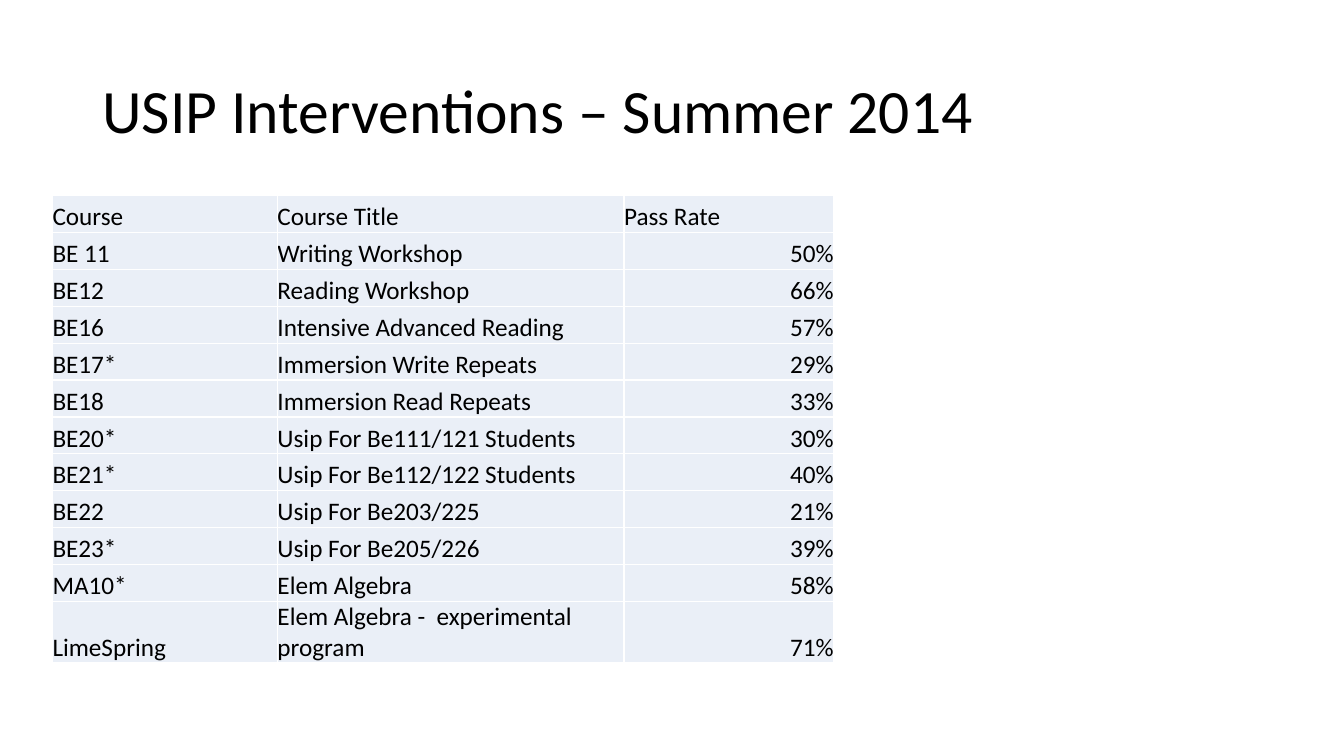
"""Build the slide with the pass rates of the summer 2014 USIP courses."""
from lxml import etree
from pptx import Presentation
from pptx import util as u
from pptx.dml.color import RGBColor
from pptx.enum import text
from pptx.oxml.ns import qn

BLACK = RGBColor(0x00, 0x00, 0x00)
WHITE = RGBColor(0xFF, 0xFF, 0xFF)
PALE_BLUE = RGBColor(0xEA, 0xEF, 0xF7)

COLUMN_WIDTHS = (160.7, 247.6, 149.8)
ROW_HEIGHT = 26.35
LAST_ROW_HEIGHT = 43.2

COURSES = [
    ("Course", "Course Title", "Pass Rate"),
    ("BE 11", "Writing Workshop", "50%"),
    ("BE12", "Reading Workshop", "66%"),
    ("BE16", "Intensive Advanced Reading", "57%"),
    ("BE17*", "Immersion Write Repeats", "29%"),
    ("BE18", "Immersion Read Repeats", "33%"),
    ("BE20*", "Usip For Be111/121 Students", "30%"),
    ("BE21*", "Usip For Be112/122 Students", "40%"),
    ("BE22", "Usip For Be203/225", "21%"),
    ("BE23*", "Usip For Be205/226", "39%"),
    ("MA10*", "Elem Algebra", "58%"),
    ("LimeSpring", "Elem Algebra -  experimental program", "71%"),
]


class SlideBuilder:
    """Hold the text style and the current slide."""

    def __init__(self, slide, font="Calibri", color=BLACK):
        """Remember the slide and its style."""
        self.slide, self.font, self.color = slide, font, color

    def add_text(self, paragraph, wording, size, align):
        """Add one styled run to a paragraph."""
        paragraph.alignment = align
        run = paragraph.add_run()
        run.text = wording
        run.font.name, run.font.size = self.font, u.Pt(size)
        run.font.color.rgb = self.color

    def title(self, wording, left, top, width, height):
        """Place and fill the title placeholder."""
        heading = self.slide.shapes.title
        heading.left, heading.top = u.Pt(left), u.Pt(top)
        heading.width, heading.height = u.Pt(width), u.Pt(height)
        frame = heading.text_frame
        frame.word_wrap = True
        frame.auto_size = text.MSO_AUTO_SIZE.NONE
        frame.vertical_anchor = text.MSO_ANCHOR.MIDDLE
        frame.paragraphs[0].line_spacing = 0.9
        self.add_text(frame.paragraphs[0], wording, 44, text.PP_ALIGN.LEFT)

    def borders(self, cell, color, width):
        """Draw the four borders of a cell."""
        properties = cell._tc.get_or_add_tcPr()
        for side in ("a:lnL", "a:lnR", "a:lnT", "a:lnB"):
            line = etree.SubElement(properties, qn(side), w=str(u.Pt(width)))
            fill = etree.SubElement(line, qn("a:solidFill"))
            etree.SubElement(fill, qn("a:srgbClr"), val=str(color))

    def cell(self, cell, wording, align):
        """Style and fill one table cell."""
        cell.margin_left = cell.margin_right = u.Pt(0)
        cell.margin_top = cell.margin_bottom = u.Pt(0)
        cell.vertical_anchor = text.MSO_ANCHOR.BOTTOM
        self.borders(cell, WHITE, 1)
        cell.fill.solid()
        cell.fill.fore_color.rgb = PALE_BLUE
        self.add_text(cell.text_frame.paragraphs[0], wording, 18, align)

    def table(self, rows, left, top, widths, heights):
        """Add a table whose last column is right-aligned below its heading."""
        grid = self.slide.shapes.add_table(
            len(rows), len(widths), u.Pt(left), u.Pt(top),
            u.Pt(sum(widths)), u.Pt(sum(heights))).table
        grid.first_row = grid.horz_banding = False
        for column, width in zip(grid.columns, widths):
            column.width = u.Pt(width)
        for r, (row, height) in enumerate(zip(rows, heights)):
            grid.rows[r].height = u.Pt(height)
            for c, wording in enumerate(row):
                is_rate = r > 0 and c == len(widths) - 1
                align = text.PP_ALIGN.RIGHT if is_rate else text.PP_ALIGN.LEFT
                self.cell(grid.cell(r, c), wording, align)


def main():
    """Build and save the slide."""
    deck = Presentation()
    deck.slide_width, deck.slide_height = u.Pt(960), u.Pt(540)
    builder = SlideBuilder(deck.slides.add_slide(deck.slide_layouts[5]))
    builder.title("USIP Interventions – Summer 2014", 66, 28.75, 828, 104.4)
    heights = [ROW_HEIGHT] * (len(COURSES) - 1) + [LAST_ROW_HEIGHT]
    builder.table(COURSES, 37.5, 139.8, COLUMN_WIDTHS, heights)
    deck.save("out.pptx")


if __name__ == "__main__":
    main()
